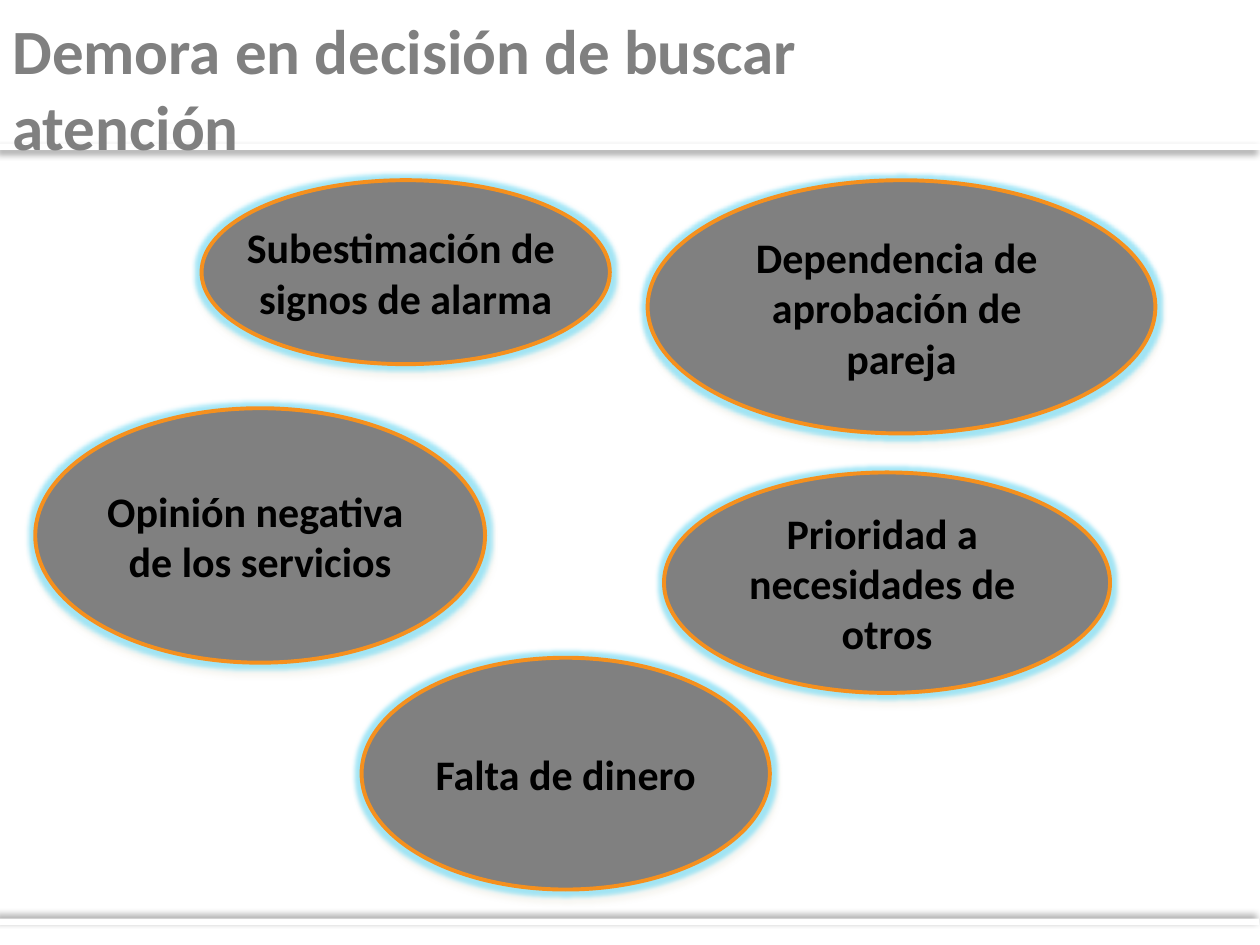
from lxml.etree import SubElement
from pptx import Presentation
from pptx.dml.color import RGBColor
from pptx.enum.shapes import MSO_SHAPE as Shape
from pptx.enum.text import MSO_ANCHOR as Anchor, PP_ALIGN as Align
from pptx.oxml.ns import qn
from pptx.util import Inches, Pt

WHITE = RGBColor(0xFF, 0xFF, 0xFF)
BLACK = RGBColor(0x00, 0x00, 0x00)
GRAY = RGBColor(0x80, 0x80, 0x80)
ORANGE = RGBColor(0xF5, 0x90, 0x1E)
CYAN = RGBColor(0x8C, 0xE0, 0xF5)
CREAM = RGBColor(0xEE, 0xEC, 0xE1)

WIDTH, HEIGHT = Inches(10), Inches(7.5)

TITLE = "Demora en decisión de buscar atención"
TITLE_BOX = (0, 0, 73.6, 18.53)
RULES = [((0, 15.2, 100, 0.67), 0, 135), ((-0.1, 97.2, 100, 0.67), 180, 225)]
CAUSES = [
    ((16, 19.07, 32.4, 19.47), ["Subestimación de ", "signos de alarma"]),
    ((52.7, 50, 35.4, 23.33), ["Prioridad a ", "necesidades de ", "otros"]),
    ((51.4, 19.07, 40.3, 26.8), ["Dependencia de ", "aprobación de ", "pareja"]),
    ((2.8, 43.2, 35.7, 26.93), ["Opinión negativa ", "de los servicios"]),
    ((28.7, 69.6, 32.4, 24.53), ["Falta de dinero"]),
]


def place(box):
    """Turn percentages of the slide into left, top, width and height."""
    left, top, width, height = box
    return [int(share * side / 100) for share, side in
            ((left, WIDTH), (top, HEIGHT), (width, WIDTH), (height, HEIGHT))]


def add_effect(shape, kind, color, alpha, **settings):
    """Add a glow or an outer shadow to a shape's effect list."""
    effects = shape._element.spPr.find(qn("a:effectLst"))
    effect = SubElement(effects, qn(kind), {key: str(value) for key, value in settings.items()})
    tint = SubElement(effect, qn("a:srgbClr"), val=str(color))
    SubElement(tint, qn("a:alpha"), val=str(alpha * 1000))


def set_font(para, size, color):
    """Give a paragraph the bold face of the slide."""
    para.font.name = "Calibri"
    para.font.size = Pt(size)
    para.font.bold = True
    para.font.color.rgb = color


def add_rule(page, box, rotation, direction):
    """Draw a thin white band that casts a soft shadow."""
    band = page.shapes.add_shape(Shape.RECTANGLE, *place(box))
    band.rotation = rotation
    band.shadow.inherit = False
    band.fill.solid()
    band.fill.fore_color.rgb = WHITE
    band.line.fill.background()
    add_effect(band, "a:outerShdw", BLACK, 40, blurRad=Pt(4), dist=Pt(3),
               dir=direction * 60000, algn="tr", rotWithShape=0)


def add_title(page, box, text):
    """Write the slide heading."""
    frame = page.shapes.add_textbox(*place(box)).text_frame
    frame.word_wrap = True
    frame.vertical_anchor = Anchor.MIDDLE
    para = frame.paragraphs[0]
    para.text = text
    set_font(para, 36, GRAY)


def add_cause(page, box, lines):
    """Draw a glowing ellipse that names one cause of delay."""
    oval = page.shapes.add_shape(Shape.OVAL, *place(box))
    oval.shadow.inherit = False
    oval.fill.solid()
    oval.fill.fore_color.rgb = GRAY
    oval.line.color.rgb = ORANGE
    oval.line.width = Pt(2.25)
    add_effect(oval, "a:glow", CYAN, 80, rad=Pt(5))
    add_effect(oval, "a:outerShdw", CREAM, 50, blurRad=0, dist=Pt(4.1),
               dir=76 * 60000, algn="ctr", rotWithShape=0)
    frame = oval.text_frame
    frame.word_wrap = False
    frame.vertical_anchor = Anchor.MIDDLE
    for index, line in enumerate(lines):
        para = frame.add_paragraph() if index else frame.paragraphs[0]
        para.text = line
        para.alignment = Align.CENTER
        set_font(para, 24, BLACK)


def main():
    """Build the slide and save the deck."""
    deck = Presentation()
    deck.slide_width, deck.slide_height = WIDTH, HEIGHT
    page = deck.slides.add_slide(deck.slide_layouts[6])
    for box, rotation, direction in RULES:
        add_rule(page, box, rotation, direction)
    add_title(page, TITLE_BOX, TITLE)
    for box, lines in CAUSES:
        add_cause(page, box, lines)
    deck.save("out.pptx")


if __name__ == "__main__":
    main()
